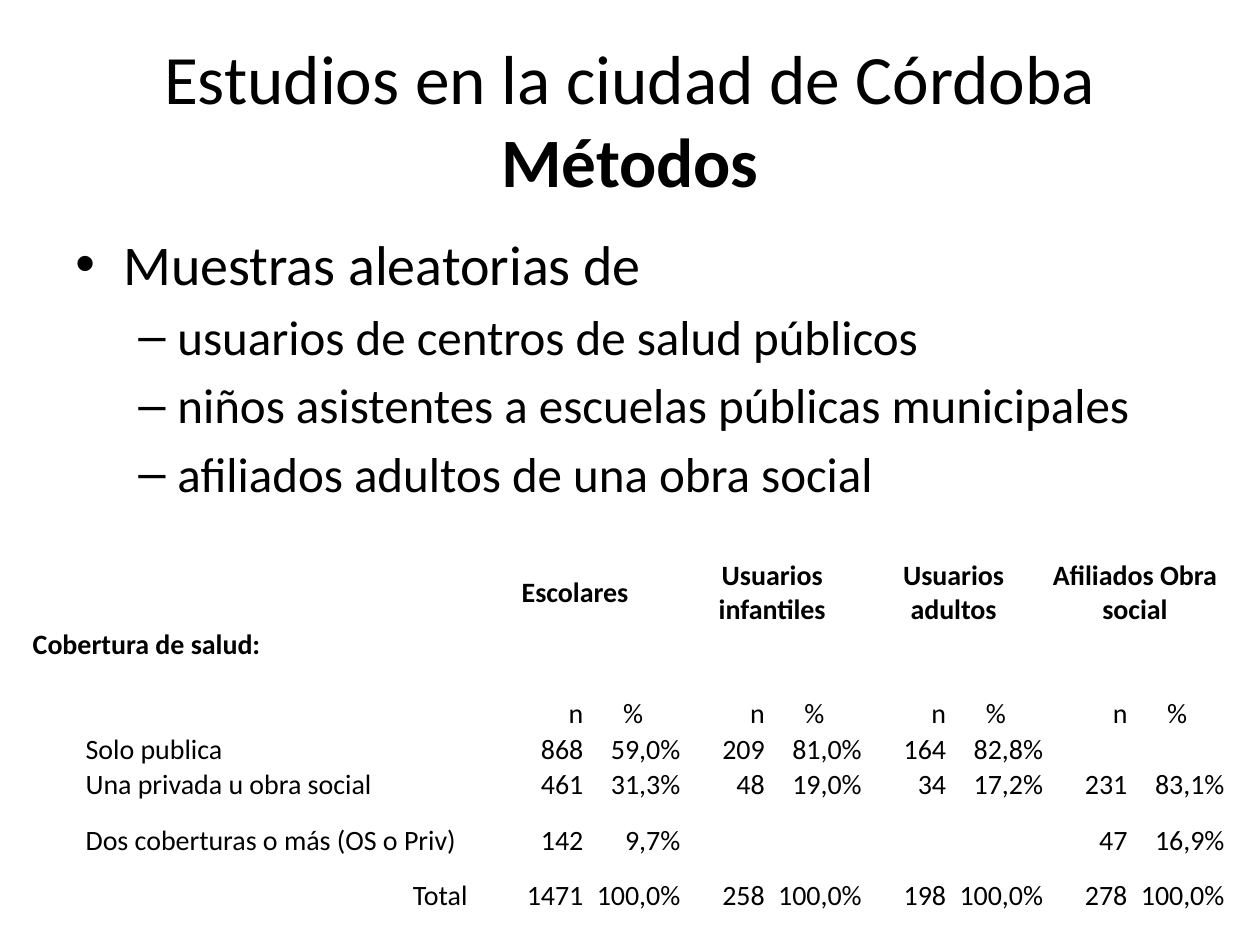
from pptx import Presentation
from pptx.util import Inches, Pt
from pptx.dml.color import RGBColor
from pptx.enum.text import PP_ALIGN, MSO_ANCHOR
from lxml.etree import SubElement
from pptx.oxml.ns import qn

INK = {"text": "000000"}
FONT = "Calibri"
LEFT, MID, RIGHT = PP_ALIGN.LEFT, PP_ALIGN.CENTER, PP_ALIGN.RIGHT

deck = Presentation()
deck.slide_width, deck.slide_height = Inches(10), Inches(7.5)
wide, high = deck.slide_width, deck.slide_height
slide = deck.slides.add_slide(deck.slide_layouts[6])


def write(para, text, size, bold=False):
    run = para.add_run()
    run.text = text
    run.font.name, run.font.size, run.font.bold = FONT, Pt(size), bold
    run.font.color.rgb = RGBColor.from_string(INK["text"])


def frame(x, y, w, h):
    box = slide.shapes.add_textbox(int(x * wide), int(y * high), int(w * wide), int(h * high))
    box.text_frame.word_wrap = True
    return box.text_frame


# Title
title = frame(0.05, 0.04, 0.9, 0.17)
title.margin_top = title.margin_bottom = 0
title.vertical_anchor = MSO_ANCHOR.MIDDLE
para = title.paragraphs[0]
para.alignment = MID
write(para, "Estudios en la ciudad de Córdoba", 39.6)
para.add_line_break()
write(para, "Métodos", 39.6, True)

# Bullets: level, text
points = [
    (0, "Muestras aleatorias de"),
    (1, "usuarios de centros de salud públicos"),
    (1, "niños asistentes a escuelas públicas municipales"),
    (1, "afiliados adultos de una obra social"),
]
levels = [("•", 32, 0.38, 0.38), ("–", 28, 0.81, 0.31)]
body = frame(0.05, 0.236, 0.9, 0.66)
for i, (level, text) in enumerate(points):
    mark, size, left, hang = levels[level]
    para = body.paragraphs[0] if i == 0 else body.add_paragraph()
    para.level = level
    if i:
        para.space_before = Pt(size * 0.2)
    props = para._p.get_or_add_pPr()
    props.set("marL", str(Inches(left)))
    props.set("indent", str(-Inches(hang)))
    SubElement(props, qn("a:buFont")).set("typeface", "Arial")
    SubElement(props, qn("a:buChar")).set("char", mark)
    write(para, text, size)

# Table of health cover
cols = [0.47, 3.05, 0.92, 0.77] + [0.67, 0.77] * 3
rows = [0.55, 0.83, 0.28, 0.44, 0.44, 0.42]
data = [
    ["Cobertura de salud:", "", "Escolares", "", "Usuarios infantiles", "",
     "Usuarios adultos", "", "Afiliados Obra social", ""],
    ["", ""] + ["n", "%"] * 4,
    ["", "Solo publica", "868", "59,0%", "209", "81,0%", "164", "82,8%", "", ""],
    ["", "Una privada u obra social", "461", "31,3%", "48", "19,0%", "34", "17,2%", "231", "83,1%"],
    ["", "Dos coberturas o más (OS o Priv)", "142", "9,7%", "", "", "", "", "47", "16,9%"],
    ["Total", "", "1471", "100,0%", "258", "100,0%", "198", "100,0%", "278", "100,0%"],
]
grid = slide.shapes.add_table(len(rows), len(cols), int(0.02 * wide), int(0.59 * high),
                              Inches(sum(cols)), Inches(sum(rows))).table
grid.first_row = grid.horz_banding = False
for col, size in zip(grid.columns, cols):
    col.width = Inches(size)
for row, size in zip(grid.rows, rows):
    row.height = Inches(size)

# Merged cells: top, left, bottom, right
spans = [(0, 0, 1, 1), (2, 0, 4, 0), (5, 0, 5, 1)] + [(0, c, 0, c + 1) for c in range(2, 10, 2)]
for top, left, low, right in spans:
    grid.cell(top, left).merge(grid.cell(low, right))

# Cell text
anchors = [MSO_ANCHOR.MIDDLE, MSO_ANCHOR.BOTTOM] + [MSO_ANCHOR.TOP] * 4
for r, line in enumerate(data):
    for c, text in enumerate(line):
        cell = grid.cell(r, c)
        cell.fill.background()
        cell.margin_left = cell.margin_right = cell.margin_top = Inches(0.01)
        cell.margin_bottom = 0
        cell.vertical_anchor = anchors[r]
        para = cell.text_frame.paragraphs[0]
        if c < 2:
            para.alignment = RIGHT if r == 5 else LEFT
        else:
            para.alignment = MID if r == 0 or text == "%" else RIGHT
        if text:
            write(para, text, 16, r == 0)
        else:
            SubElement(para._p, qn("a:endParaRPr")).set("sz", "1600")
grid.cell(0, 0).margin_left = Inches(0.06)

deck.save("out.pptx")
